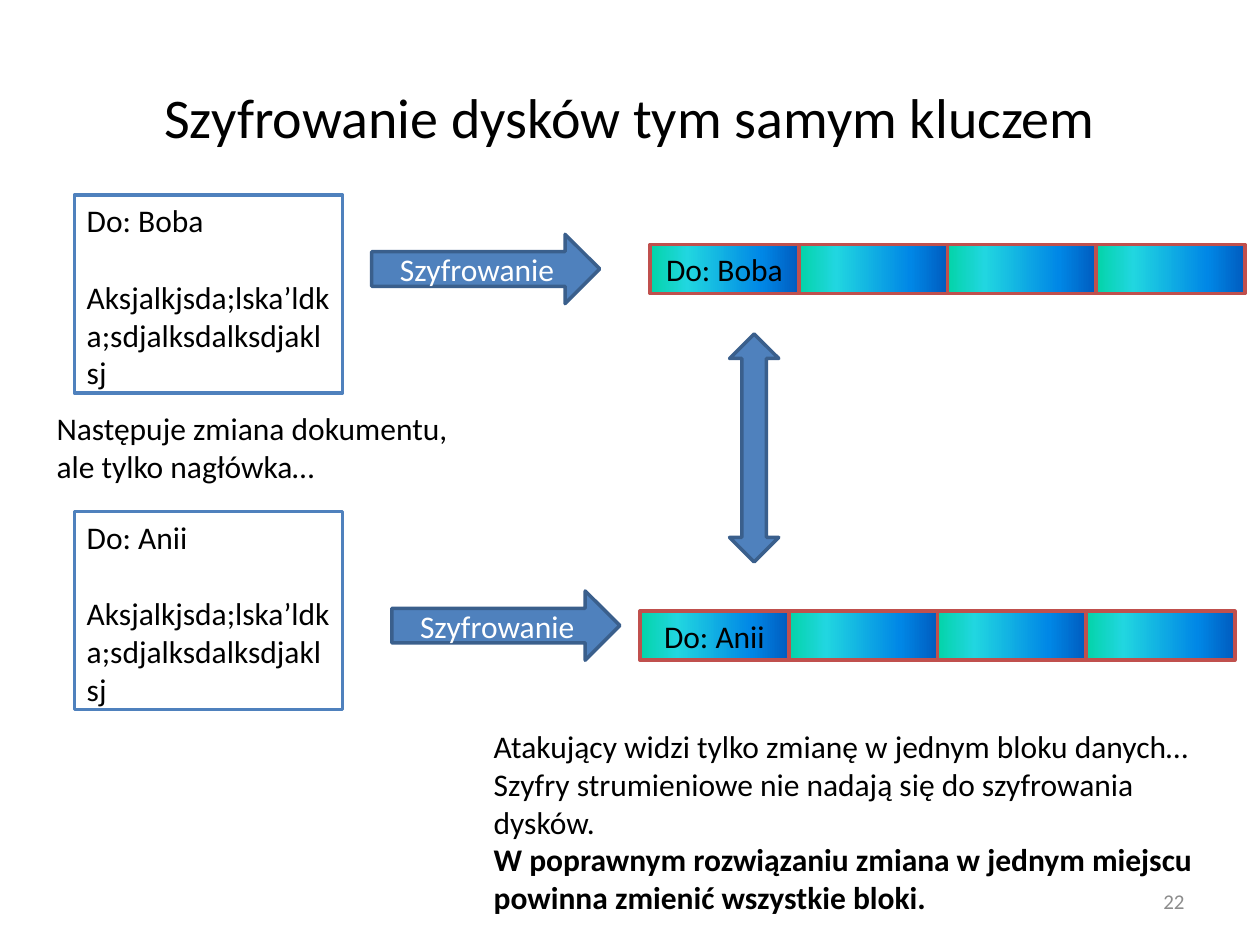
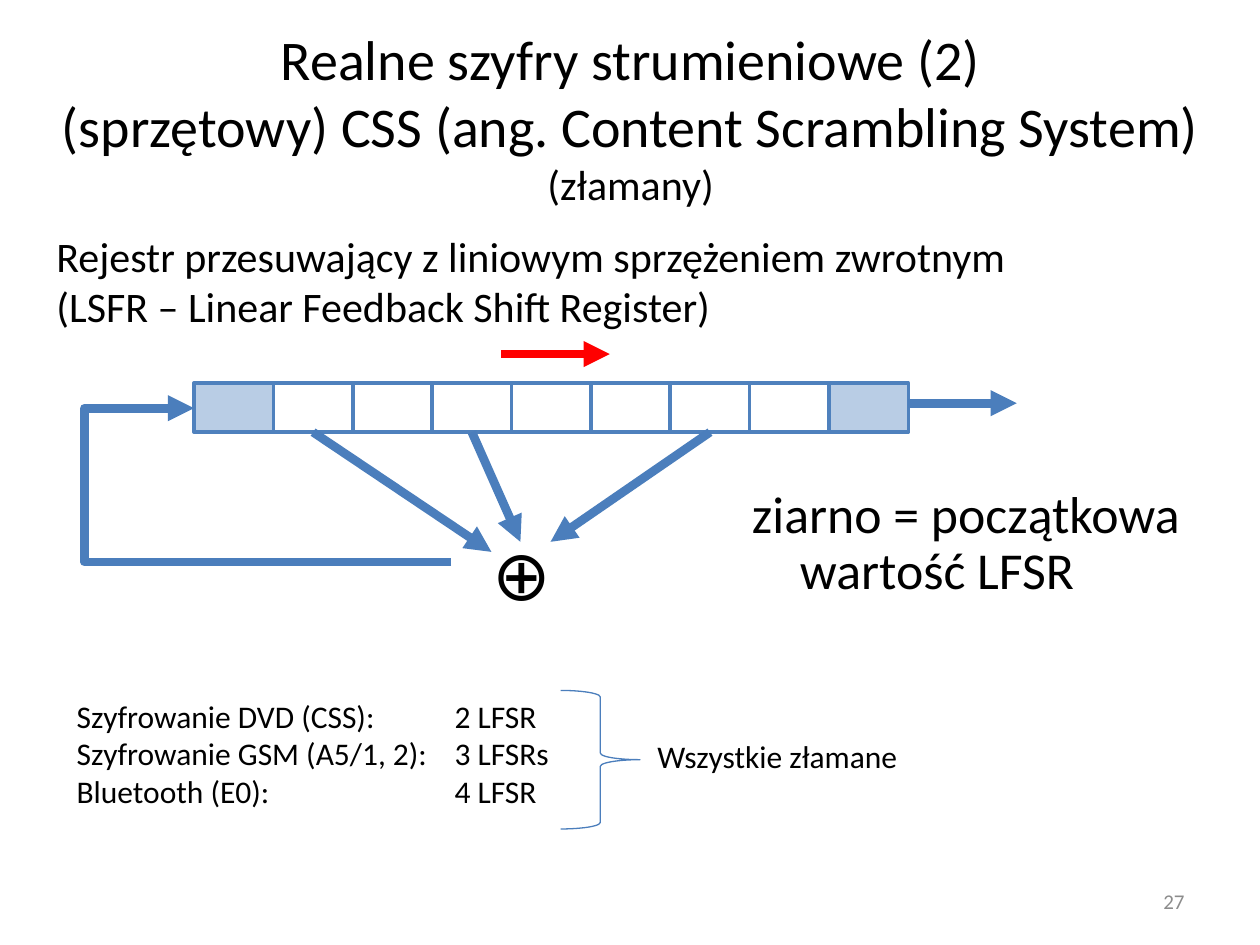
from dataclasses import dataclass

from lxml import etree
from pptx import Presentation
from pptx.dml.color import RGBColor
from pptx.enum.shapes import MSO_CONNECTOR as Link, MSO_SHAPE as Shape
from pptx.enum.text import MSO_ANCHOR as Anchor, MSO_AUTO_SIZE as AutoSize, PP_ALIGN as Align
from pptx.oxml.ns import qn
from pptx.util import Inches, Pt


@dataclass(frozen=True)
class Theme:
    font: str = "Calibri"
    ink: str = "000000"
    paper: str = "FFFFFF"
    muted: str = "8C8C8C"
    blue: str = "4F81BD"
    dark_blue: str = "3A5F8C"
    wire: str = "4B7EBC"
    pale_blue: str = "B9CDE5"
    red: str = "FF0000"
    cipher_edge: str = "C0504D"
    cipher_stops: tuple = ((0, "03D4A8"), (25, "21D6E0"), (75, "0087E6"), (100, "005CBF"))
    title: float = 32
    lead: float = 24
    body: float = 18
    seed: float = 29.6
    symbol: float = 40
    number: float = 12
    edge: float = 2
    wire_width: float = 5
    brace_width: float = 0.75


THEME = Theme()
BLOCK_HEIGHT = 0.39


def rgb(value):
    return RGBColor.from_string(value)


def box(left, top, width, height):
    return [Inches(v) for v in (left, top, width, height)]


def style_paragraph(paragraph, size, color=THEME.ink, align=Align.LEFT, bold=False):
    paragraph.alignment = align
    font = paragraph.font
    font.name, font.size, font.bold = THEME.font, Pt(size), bold
    font.color.rgb = rgb(color)


def write(frame, lines, size=THEME.body, color=THEME.ink, align=Align.LEFT, anchor=Anchor.TOP):
    frame.text = "\n".join(lines)
    frame.word_wrap = True
    frame.vertical_anchor = anchor
    for paragraph in frame.paragraphs:
        style_paragraph(paragraph, size, color, align)
    return frame.paragraphs


def add_text(slide, place, *lines, **style):
    return write(slide.shapes.add_textbox(*box(*place)).text_frame, lines, **style)


def add_figure(slide, kind, place, fill, edge, width=THEME.edge):
    """Add a preset shape; fill is a colour, a tuple of gradient stops or None."""
    figure = slide.shapes.add_shape(kind, *box(*place))
    figure.shadow.inherit = False
    if fill is None:
        figure.fill.background()
    elif isinstance(fill, tuple):
        fill_gradient(figure, fill)
    else:
        figure.fill.solid()
        figure.fill.fore_color.rgb = rgb(fill)
    figure.line.color.rgb = rgb(edge)
    figure.line.width = Pt(width)
    return figure


def fill_gradient(figure, stops):
    figure.fill.gradient()
    figure.fill.gradient_angle = 0
    stop_list = next(figure._element.iter(qn("a:gsLst")))
    for old_stop in list(stop_list):
        stop_list.remove(old_stop)
    for percent, color in stops:
        stop = etree.SubElement(stop_list, qn("a:gs"), pos=str(percent * 1000))
        etree.SubElement(stop, qn("a:srgbClr"), val=color)


def add_wire(slide, start, end, color=THEME.wire, kind=Link.STRAIGHT):
    wire = slide.shapes.add_connector(kind, *(Inches(v) for v in (*start, *end)))
    wire.line.color.rgb = rgb(color)
    wire.line.width = Pt(THEME.wire_width)
    properties = wire._element.spPr
    etree.SubElement(properties.find(qn("a:ln")), qn("a:tailEnd"), type="triangle")
    etree.SubElement(properties, qn("a:effectLst"))
    return wire


def add_feedback_wire(slide, start, end, turn_x):
    """Run left from start to turn_x, then up and back right to end."""
    wire = add_wire(slide, end, start, kind=Link.ELBOW)
    properties = wire._element.spPr
    properties.find(qn("a:xfrm")).set("rot", "10800000")
    geometry = properties.find(qn("a:prstGeom"))
    guides = geometry.find(qn("a:avLst"))
    if guides is None:
        guides = etree.SubElement(geometry, qn("a:avLst"))
    bend = round((start[0] - turn_x) / (start[0] - end[0]) * 100000)
    etree.SubElement(guides, qn("a:gd"), name="adj1", fmla=f"val {bend}")


def add_blocks(slide, left, top, width, fills, edge):
    return [
        add_figure(slide, Shape.RECTANGLE, (left + i * width, top, width, BLOCK_HEIGHT), fill, edge)
        for i, fill in enumerate(fills)
    ]


def new_slide(deck, title, title_place, number):
    slide = deck.slides.add_slide(deck.slide_layouts[5])
    heading = slide.shapes.title
    heading.left, heading.top, heading.width, heading.height = box(*title_place)
    write(heading.text_frame, [title], THEME.title, align=Align.CENTER, anchor=Anchor.MIDDLE)
    heading.text_frame.auto_size = AutoSize.NONE
    add_text(slide, (7.17, 6.95, 2.33, 0.4), str(number), size=THEME.number,
             color=THEME.muted, align=Align.RIGHT, anchor=Anchor.MIDDLE)
    return slide


def add_encryption(slide, recipient, document_top, arrow_at, blocks_at):
    """Show one document, the encryption arrow and the resulting cipher blocks."""
    document = add_figure(slide, Shape.RECTANGLE, (0.59, document_top, 2.13, 1.57),
                          THEME.paper, THEME.blue)
    header, content = write(document.text_frame,
                            [recipient, "Aksjalkjsda;lska’ldka;sdjalksdalksdjaklsj"])
    content.space_before = Pt(22)

    arrow = add_figure(slide, Shape.RIGHT_ARROW, (*arrow_at, 1.81, 0.55),
                       THEME.blue, THEME.dark_blue)
    write(arrow.text_frame, ["Szyfrowanie"], color=THEME.paper,
          align=Align.CENTER, anchor=Anchor.MIDDLE)

    blocks = add_blocks(slide, *blocks_at, 1.18, [THEME.cipher_stops] * 4, THEME.cipher_edge)
    write(blocks[0].text_frame, [recipient], align=Align.CENTER, anchor=Anchor.MIDDLE)


def build_disk_slide(deck):
    slide = new_slide(deck, "Szyfrowanie dysków tym samym kluczem", (0.5, 0.3, 9, 1.25), 22)
    add_encryption(slide, "Do: Boba", 1.55, (2.95, 1.86), (5.16, 1.94))
    add_text(slide, (0.35, 3.2, 3.39, 0.71),
             "Następuje zmiana dokumentu,\vale tylko nagłówka…")
    add_encryption(slide, "Do: Anii", 4.06, (3.11, 4.69), (5.08, 4.85))
    add_figure(slide, Shape.UP_DOWN_ARROW, (5.79, 2.65, 0.39, 1.81), THEME.blue, THEME.dark_blue)
    conclusions = add_text(
        slide, (3.82, 5.72, 5.91, 1.92),
        "Atakujący widzi tylko zmianę w jednym bloku danych…",
        "Szyfry strumieniowe nie nadają się do szyfrowania dysków.",
        "W poprawnym rozwiązaniu zmiana w jednym miejscu powinna zmienić wszystkie bloki.")
    conclusions[-1].font.bold = True


def add_register(slide):
    left, top, width = 1.54, 3.04, 0.63
    bottom = top + BLOCK_HEIGHT
    cells = [THEME.pale_blue, *[THEME.paper] * 7, THEME.pale_blue]
    add_blocks(slide, left, top, width, cells, THEME.blue)
    for cell, target in ((1, (3.9, 4.38)), (3, (4.13, 4.3)), (6, (4.37, 4.3))):
        add_wire(slide, (left + (cell + 0.5) * width, bottom), target)
    xor = add_text(slide, (3.81, 4.16, 0.65, 0.77), "⊕", size=THEME.symbol)
    xor[0].line_spacing = 1.0
    add_feedback_wire(slide, (3.58, 4.46), (left, 3.24), turn_x=0.67)
    add_wire(slide, (left + len(cells) * width, 3.2), (8.07, 3.2))
    add_wire(slide, (3.98, 2.81), (4.84, 2.81), THEME.red)


def add_tab_stop(paragraph, position):
    stops = etree.Element(qn("a:tabLst"))
    etree.SubElement(stops, qn("a:tab"), pos=str(Inches(position)), algn="l")
    paragraph._p.get_or_add_pPr().insert(0, stops)


def build_register_slide(deck):
    slide = new_slide(
        deck,
        "Realne szyfry strumieniowe (2)\v(sprzętowy) CSS (ang. Content Scrambling System) ",
        (0.2, 0.3, 9.61, 1.25), 27)
    verdict = slide.shapes.title.text_frame.paragraphs[0].add_run()
    verdict.text = "(złamany)"
    verdict.font.size = Pt(THEME.lead)

    add_text(slide, (0.35, 1.78, 9.37, 1.21),
             "Rejestr przesuwający z liniowym sprzężeniem zwrotnym\v"
             "(LSFR – Linear Feedback Shift Register)", size=THEME.lead)
    add_register(slide)

    seed = add_text(slide, (5.87, 3.83, 3.7, 1.02),
                    "ziarno = początkowa wartość LFSR", size=THEME.seed)[0]
    seed.line_spacing = 0.9
    hanging = seed._p.get_or_add_pPr()
    hanging.set("marL", str(Inches(0.38)))
    hanging.set("indent", str(Inches(-0.38)))

    ciphers = add_text(slide, (0.51, 5.48, 4.49, 1.01),
                       "Szyfrowanie DVD (CSS):\t2 LFSR",
                       "Szyfrowanie GSM (A5/1, 2):\t3 LFSRs",
                       "Bluetooth (E0):\t4 LFSR")
    for cipher in ciphers:
        add_tab_stop(cipher, 3)
    add_figure(slide, Shape.RIGHT_BRACE, (4.45, 5.48, 0.63, 1.1), None,
               THEME.wire, THEME.brace_width)
    add_text(slide, (5.12, 5.8, 2.24, 0.4), "Wszystkie złamane")


def main():
    deck = Presentation()
    deck.slide_width, deck.slide_height = Inches(10), Inches(7.5)
    build_disk_slide(deck)
    build_register_slide(deck)
    deck.save("out.pptx")


if __name__ == "__main__":
    main()
